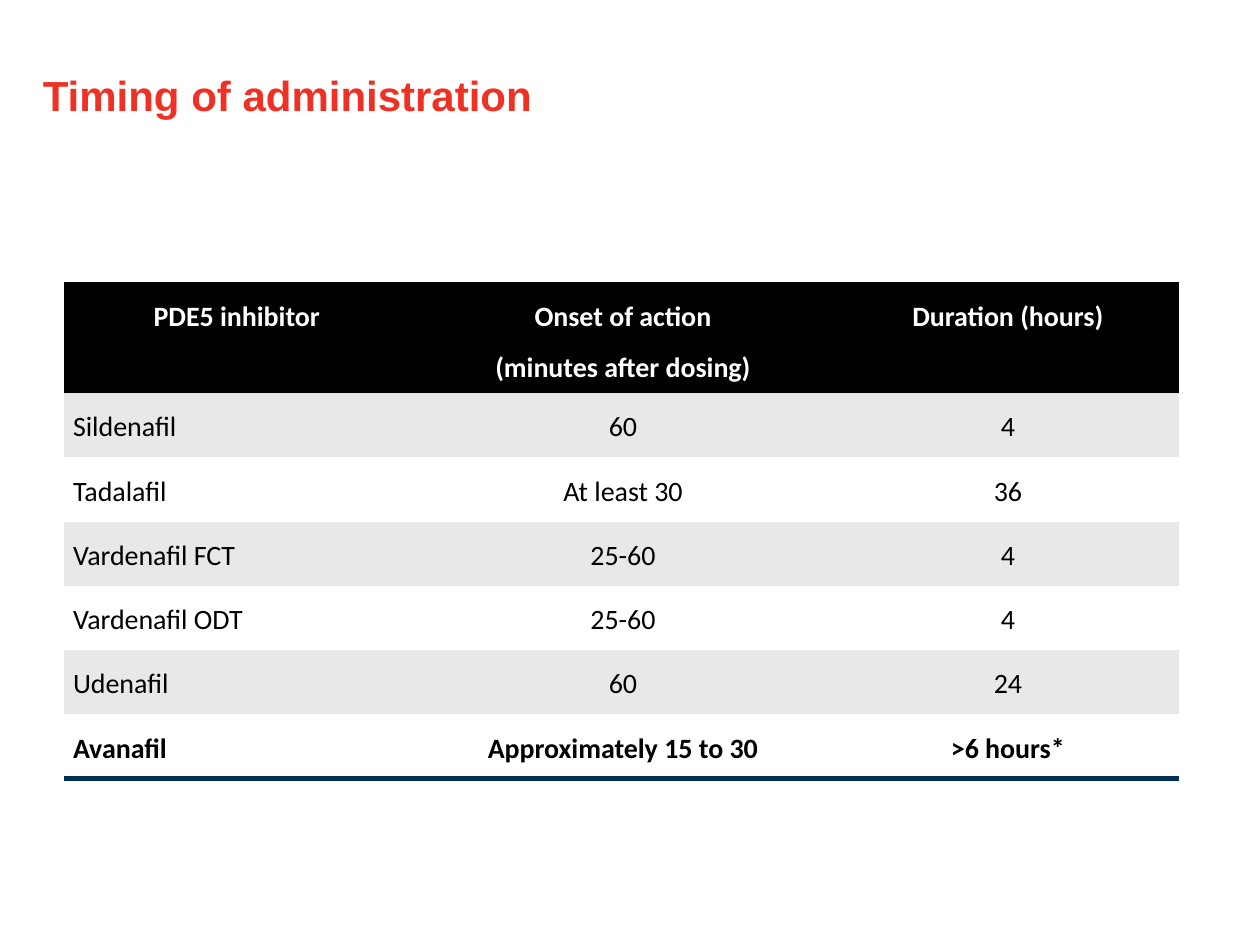
from typing import Any, NamedTuple

from lxml.etree import SubElement
from pptx import Presentation
from pptx.dml.color import RGBColor
from pptx.enum.text import PP_ALIGN
from pptx.oxml.ns import qn
from pptx.util import Inches, Pt


class Style(NamedTuple):
    """Look of a run of text."""

    font: str
    size: int
    color: str
    bold: bool = False


class Row(NamedTuple):
    """Texts and look of one table row."""

    texts: tuple[str, str, str]
    style: Style
    fill: str
    height: float = 0.51


TITLE = Style("Arial", 24, "EF3125", True)
HEAD = Style("Calibri", 16, "FFFFFF", True)
BODY = Style("Calibri", 16, "000000")
STRONG = BODY._replace(bold=True)
GREY, WHITE, BLACK, NAVY = "E7E8E9", "FFFFFF", "000000", "003053"
PLAIN = "{2D5ABB26-0587-4C30-8999-92F81FD0307C}"
WIDTHS = (2.74, 3.39, 2.72)
HEADS = ("PDE5 inhibitor", "Onset of action\n(minutes after dosing)", "Duration (hours)")
DRUGS = (
    ("Sildenafil", "60", "4"),
    ("Tadalafil", "At least 30", "36"),
    ("Vardenafil FCT", "25-60", "4"),
    ("Vardenafil ODT", "25-60", "4"),
    ("Udenafil", "60", "24"),
    ("Avanafil", "Approximately 15 to 30", ">6 hours*"),
)


def paint(hue: str) -> RGBColor:
    """Turn a hex string into a colour."""
    return RGBColor.from_string(hue)


def write(frame: Any, text: str, style: Style, align: PP_ALIGN, pitch: float) -> None:
    """Write each line of text as a paragraph."""
    for i, line in enumerate(text.split("\n")):
        para = frame.add_paragraph() if i else frame.paragraphs[0]
        para.alignment = align
        para.line_spacing = pitch
        run = para.add_run()
        run.text = line
        run.font.name = style.font
        run.font.size = Pt(style.size)
        run.font.bold = style.bold
        run.font.color.rgb = paint(style.color)


def add_title(slide: Any, text: str) -> None:
    """Add the slide heading."""
    box = slide.shapes.add_textbox(Inches(0.34), Inches(0.53), Inches(9.3), Inches(0.48))
    frame = box.text_frame
    frame.word_wrap = True
    frame.margin_left = frame.margin_right = 0
    write(frame, text, TITLE, PP_ALIGN.LEFT, 0.95)


def rule(cell: Any, hue: str, width: float) -> None:
    """Draw a line along the bottom of a cell."""
    props = cell._tc.get_or_add_tcPr()
    line = SubElement(props, qn("a:lnB"), w=str(Pt(width)))
    fill = SubElement(line, qn("a:solidFill"))
    SubElement(fill, qn("a:srgbClr"), val=hue)
    props.insert(0, line)


def add_grid(slide: Any, rows: list[Row]) -> None:
    """Add the table of drugs."""
    high = sum(row.height for row in rows)
    holder = slide.shapes.add_table(
        len(rows), len(WIDTHS), Inches(0.51), Inches(2.24), Inches(sum(WIDTHS)), Inches(high)
    )
    table = holder.table
    table.horz_banding = False
    for tag in holder.element.iter(qn("a:tableStyleId")):
        tag.text = PLAIN
    for col, width in zip(table.columns, WIDTHS):
        col.width = Inches(width)
    for r, row in enumerate(rows):
        table.rows[r].height = Inches(row.height)
        for c, text in enumerate(row.texts):
            cell = table.cell(r, c)
            cell.margin_left = cell.margin_right = Inches(0.07)
            cell.margin_top = cell.margin_bottom = 0
            cell.fill.solid()
            cell.fill.fore_color.rgb = paint(row.fill)
            align = PP_ALIGN.LEFT if r and not c else PP_ALIGN.CENTER
            write(cell.text_frame, text, row.style, align, 1.5)
    for cell in table.rows[len(rows) - 1].cells:
        rule(cell, NAVY, 3)


def main() -> None:
    """Build and save the slide."""
    deck = Presentation()
    deck.slide_width, deck.slide_height = Inches(10), Inches(7.5)
    slide = deck.slides.add_slide(deck.slide_layouts[6])
    add_title(slide, "Timing of administration")
    rows = [Row(HEADS, HEAD, BLACK, 0.88)]
    for i, drug in enumerate(DRUGS):
        style = STRONG if drug == DRUGS[-1] else BODY
        rows.append(Row(drug, style, WHITE if i % 2 else GREY))
    add_grid(slide, rows)
    deck.save("out.pptx")


if __name__ == "__main__":
    main()
